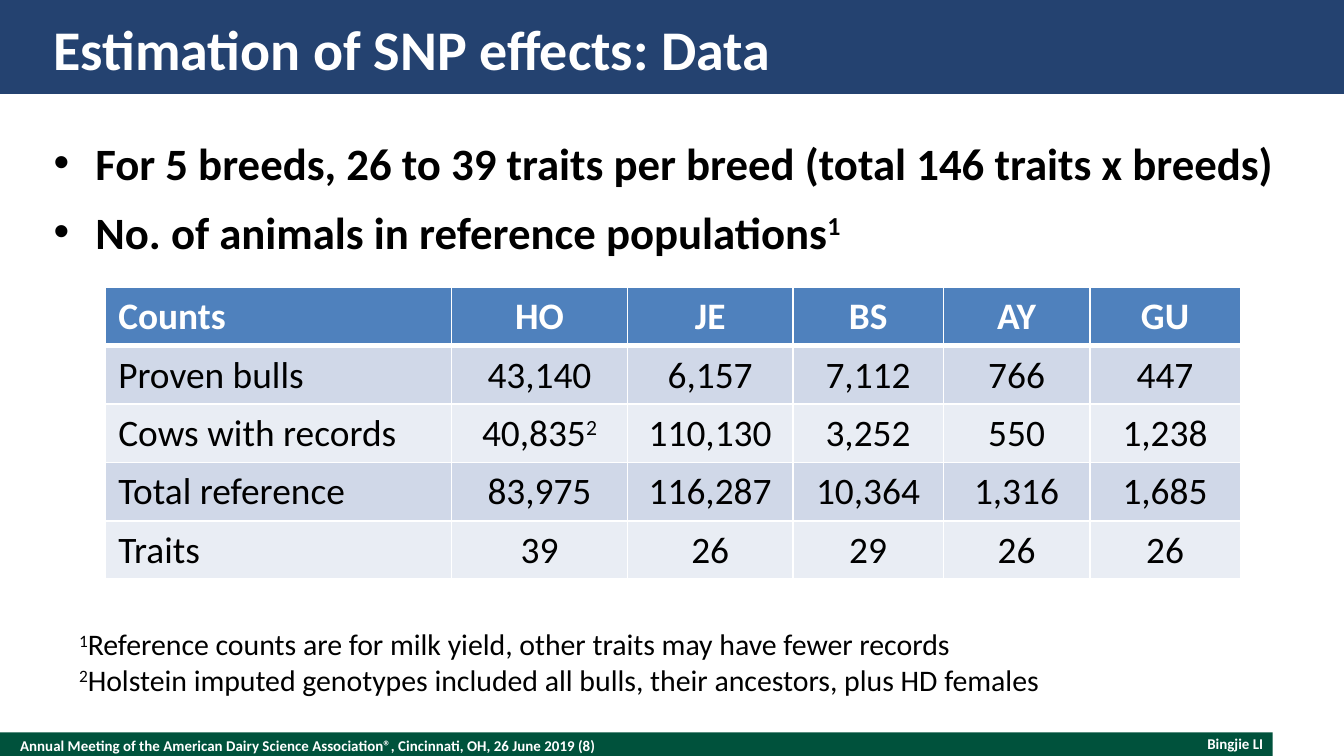
from lxml import etree
from pptx import Presentation, util as u
from pptx.dml.color import RGBColor
from pptx.enum import shapes, text
from pptx.oxml import ns

FONT = "Calibri"
WHITE, BLACK = "FFFFFF", "000000"
NAVY, GREEN = "244270", "00523C"
HEADER, BANDS = "4F81BD", ("D0D8E8", "E9EDF4")
LEFT, CENTER, RIGHT = (
    text.PP_ALIGN.LEFT, text.PP_ALIGN.CENTER, text.PP_ALIGN.RIGHT)

# A caret marks the start and end of a superscript
BULLETS = [
    "For 5 breeds, 26 to 39 traits per breed (total 146 traits x breeds)",
    "No. of animals in reference populations^1^",
]
COUNTS = [
    ["Counts", "HO", "JE", "BS", "AY", "GU"],
    ["Proven bulls", "43,140", "6,157", "7,112", "766", "447"],
    ["Cows with records", "40,835^2^", "110,130", "3,252", "550", "1,238"],
    ["Total reference", "83,975", "116,287", "10,364", "1,316", "1,685"],
    ["Traits", "39", "26", "29", "26", "26"],
]
COLUMN_WIDTHS = [25.8, 13.1, 12.3, 11.2, 10.9, 11.2]
FOOTNOTES = [
    "^1^Reference counts are for milk yield, other traits may have fewer records",
    "^2^Holstein imputed genotypes included all bulls, their ancestors, plus HD females",
]


def grid(*steps):
    """Lengths on a grid of 100 columns across the slide, with square cells."""
    return [u.Inches(step / 10) for step in steps]


def color(value):
    return RGBColor.from_string(value)


def add_bar(page, area, fill):
    bar = page.shapes.add_shape(shapes.MSO_SHAPE.RECTANGLE, *grid(*area))
    bar.shadow.inherit = False
    bar.fill.solid()
    bar.fill.fore_color.rgb = color(fill)
    bar.line.fill.background()


def write(para, words, size, ink, bold=False, align=LEFT):
    para.alignment = align
    para.font.name = FONT
    para.font.size = u.Pt(size)
    para.font.bold = bold
    para.font.color.rgb = color(ink)
    for index, part in enumerate(words.split("^")):
        if part:
            span = para.add_run()
            span.text = part
            if index % 2:
                span.font._element.set("baseline", "30000")


def add_bullet(para):
    props = para._p.get_or_add_pPr()
    props.set("marL", str(u.Inches(0.31)))
    props.set("indent", str(-u.Inches(0.31)))
    etree.SubElement(props, ns.qn("a:buFont"), typeface="Arial")
    etree.SubElement(props, ns.qn("a:buChar"), char="•")
    para.line_spacing = u.Pt(25)
    para.space_after = u.Pt(12)


def add_text(page, area, lines, size, ink, bold=False, align=LEFT,
             anchor=text.MSO_ANCHOR.MIDDLE, inset=False, bullets=False):
    box = page.shapes.add_textbox(*grid(*area))
    frame = box.text_frame
    frame.word_wrap = not inset
    frame.vertical_anchor = anchor
    if not inset:
        frame.margin_left = frame.margin_right = 0
        frame.margin_top = frame.margin_bottom = 0
    for index, line in enumerate(lines):
        para = frame.add_paragraph() if index else frame.paragraphs[0]
        if bullets:
            add_bullet(para)
        write(para, line, size, ink, bold, align)


def set_borders(cell, bottom):
    """White rules; they must come before the fill in the cell properties."""
    props = cell._tc.get_or_add_tcPr()
    for side, width in (("L", 1), ("R", 1), ("T", 1), ("B", bottom)):
        rule = etree.SubElement(
            props, ns.qn(f"a:ln{side}"), w=str(u.Pt(width)))
        solid = etree.SubElement(rule, ns.qn("a:solidFill"))
        etree.SubElement(solid, ns.qn("a:srgbClr"), val=WHITE)


def add_counts_table(page, left, top, row_height):
    area = grid(left, top, sum(COLUMN_WIDTHS), row_height * len(COUNTS))
    table = page.shapes.add_table(
        len(COUNTS), len(COLUMN_WIDTHS), *area).table
    table.horz_banding = False
    for column, width in zip(table.columns, grid(*COLUMN_WIDTHS)):
        column.width = width
    for row, values in enumerate(COUNTS):
        heading = row == 0
        table.rows[row].height = grid(row_height)[0]
        for column, value in enumerate(values):
            cell = table.cell(row, column)
            set_borders(cell, 3 if heading else 1)
            cell.fill.solid()
            cell.fill.fore_color.rgb = color(
                HEADER if heading else BANDS[(row - 1) % 2])
            write(cell.text_frame.paragraphs[0], value, 20,
                  WHITE if heading else BLACK, heading,
                  CENTER if column else LEFT)


def main():
    deck = Presentation()
    deck.slide_width, deck.slide_height = grid(100, 56.25)
    page = deck.slides.add_slide(deck.slide_layouts[6])
    top = text.MSO_ANCHOR.TOP

    # Footer and title bars
    add_bar(page, (0, 54.5, 94.7, 2), GREEN)
    add_bar(page, (0, 0, 100, 7), NAVY)
    add_text(page, (1.5, 54.5, 65, 2),
             ["Annual Meeting of the American Dairy Science Association®, "
              "Cincinnati, OH, 26 June 2019 (8)"], 8, WHITE, bold=True)
    add_text(page, (72, 54.7, 22, 1.3), ["Bingjie LI"], 8, WHITE,
             bold=True, align=RIGHT)
    add_text(page, (4, 1, 92, 5.2), ["Estimation of SNP effects: Data"],
             30, WHITE, bold=True)

    # Main points, counts and footnotes
    add_text(page, (4, 10.6, 92, 40), BULLETS, 24, BLACK, bold=True,
             anchor=top, bullets=True)
    add_counts_table(page, 7.8, 21.4, 4.1)
    add_text(page, (4.9, 46.1, 74.4, 6.4), FOOTNOTES, 16, BLACK,
             anchor=top, inset=True)

    deck.save("out.pptx")


if __name__ == "__main__":
    main()
